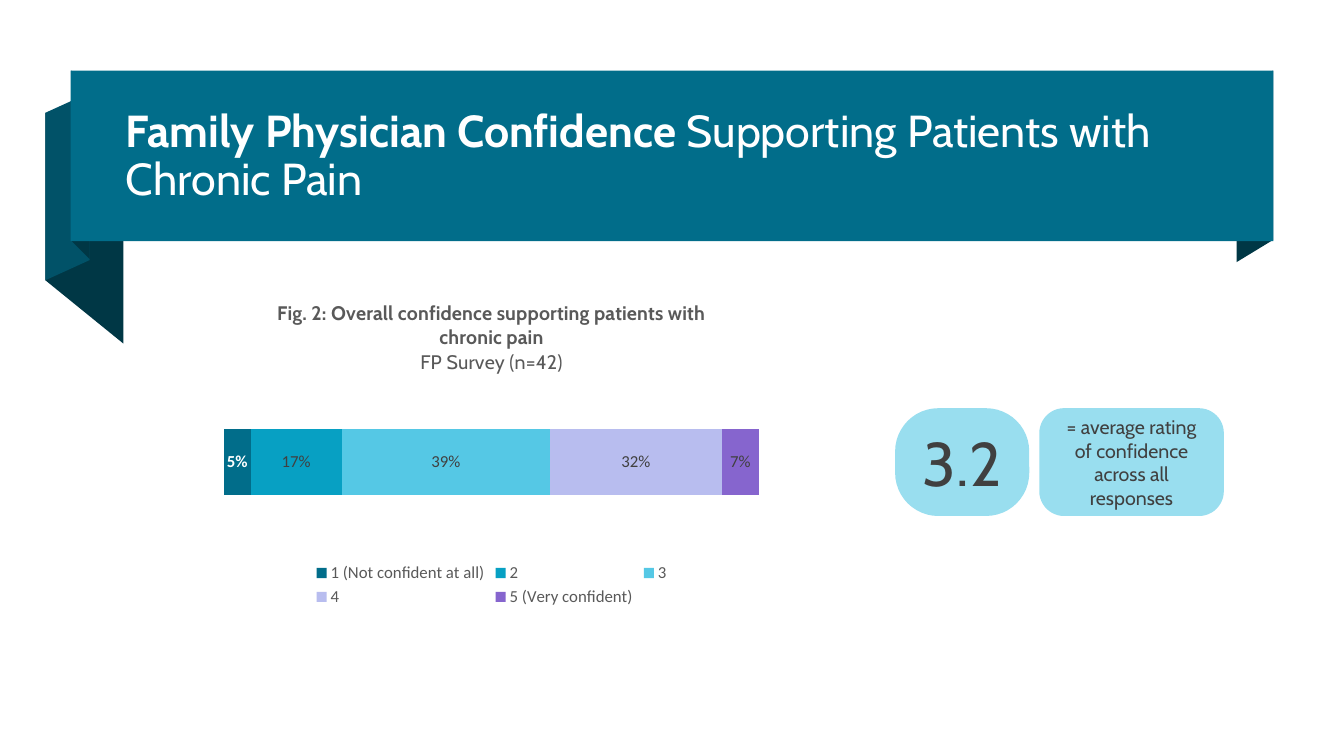
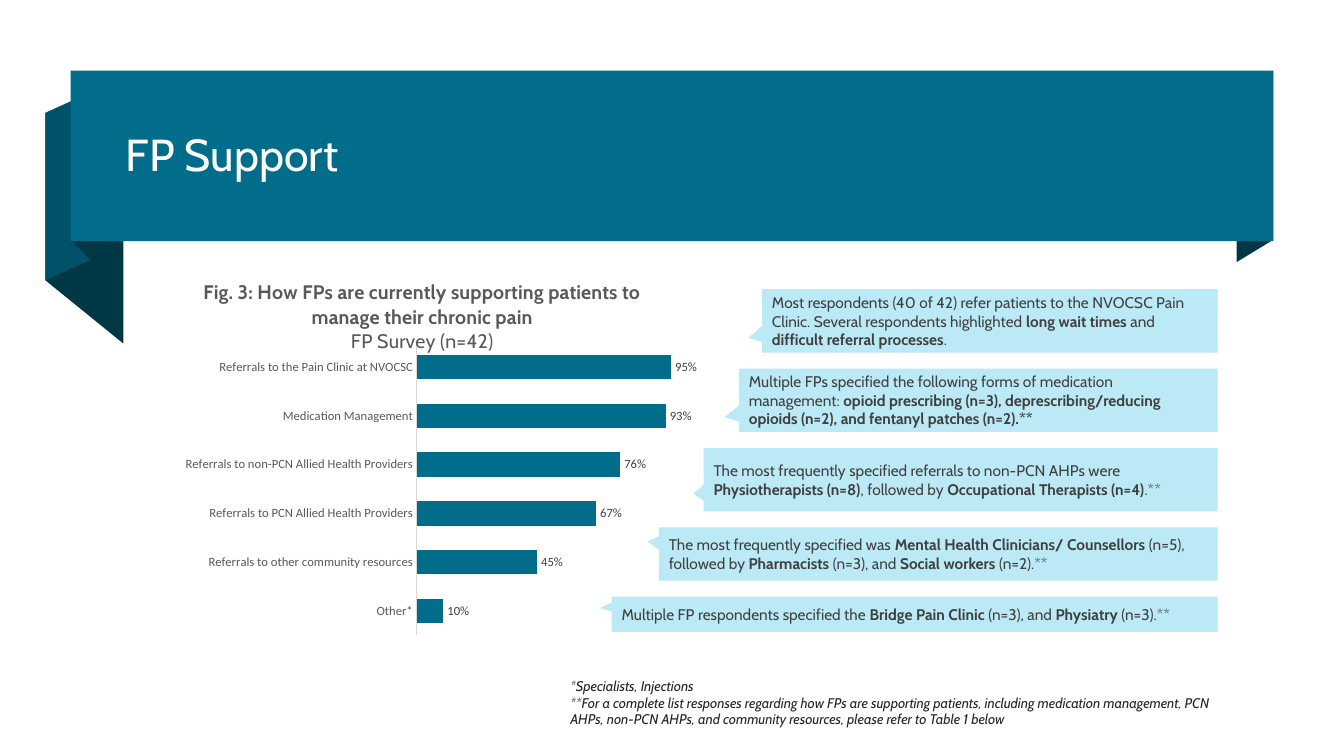
from dataclasses import dataclass
from typing import Any, Optional, Sequence

import pptx
import pptx.chart.data
import pptx.dml.color
import pptx.enum.chart
import pptx.enum.shapes
import pptx.enum.text
import pptx.oxml
import pptx.oxml.ns
import pptx.util

Pt = pptx.util.Pt
qn = pptx.oxml.ns.qn
Align = pptx.enum.text.PP_ALIGN
Anchor = pptx.enum.text.MSO_ANCHOR
Preset = pptx.enum.shapes.MSO_SHAPE
ChartType = pptx.enum.chart.XL_CHART_TYPE
LabelPosition = pptx.enum.chart.XL_LABEL_POSITION


@dataclass(frozen=True)
class Theme:
    text_font: str = "Cabin"
    chart_font: str = "Calibri"
    teal: str = "016D8A"
    fold: str = "015268"
    deep_fold: str = "003745"
    badge: str = "99DEEF"
    callout: str = "BBE9F5"
    white: str = "FFFFFF"
    ink: str = "404040"
    note: str = "262626"
    chart_text: str = "595959"
    axis: str = "D9D9D9"
    scale: tuple[str, ...] = ("016D8A", "07A0C3", "55C8E5", "B8BDEF", "8665CE")
    title_size: float = 32
    score_size: float = 44
    badge_size: float = 14
    callout_size: float = 11
    note_size: float = 10
    chart_title_size: float = 14
    legend_size: float = 12
    chart_size: float = 10
    bar_label_size: float = 9


THEME = Theme()


@dataclass(frozen=True)
class Span:
    text: str
    bold: bool = False
    italic: bool = False


@dataclass(frozen=True)
class Area:
    left: float
    top: float
    width: float
    height: float

    def lengths(self) -> tuple[Any, ...]:
        return Pt(self.left), Pt(self.top), Pt(self.width), Pt(self.height)


@dataclass(frozen=True)
class Badge:
    area: Area
    rounding: float
    text: str
    size: float


@dataclass(frozen=True)
class Callout:
    left: float
    height: float
    tip: tuple[float, float]
    spans: tuple[Span, ...]


@dataclass(frozen=True)
class Fold:
    color: str
    corners: tuple[tuple[float, float], ...]


@dataclass(frozen=True)
class BarSeries:
    name: str
    values: tuple[float, ...]
    color: str
    label_color: str = THEME.ink
    label_bold: bool = False


FOLDS = (
    Fold(THEME.deep_fold, ((909.4, 171.4), (883.4, 187.2), (883.4, 65.5), (909.4, 50.4))),
    Fold(THEME.deep_fold, ((88.2, 245.5), (32.4, 200.2), (32.4, 80.6), (88.2, 126))),
    Fold(THEME.fold, ((64, 185.8), (32.4, 200.2), (32.4, 80.6), (64, 66.2))),
    Fold(THEME.deep_fold, ((64, 185), (51, 172), (51, 50.4), (64, 64))),
)
BAND = Area(50.4, 50.4, 859.2, 121.8)
TITLE = Area(82.8, 59.8, 787.7, 104.4)

BADGES = (
    Badge(Area(639.4, 291.6, 95.8, 77), 0.4, "3.2", THEME.score_size),
    Badge(Area(742.4, 291.6, 131.8, 77), 0.23,
          "= average rating of confidence across all responses", THEME.badge_size),
)

CONFIDENCE = (
    BarSeries("1 (Not confident at all)", (0.05,), THEME.scale[0], THEME.white, True),
    BarSeries("2", (0.17,), THEME.scale[1]),
    BarSeries("3", (0.39,), THEME.scale[2]),
    BarSeries("4", (0.32,), THEME.scale[3]),
    BarSeries("5 (Very confident)", (0.07,), THEME.scale[4]),
)

SUPPORT_KINDS = (
    "Other*",
    "Referrals to other community resources",
    "Referrals to PCN Allied Health Providers",
    "Referrals to non-PCN Allied Health Providers",
    "Medication Management",
    "Referrals to the Pain Clinic at NVOCSC",
)
SUPPORT = (BarSeries("Series 1", (0.1, 0.45, 0.67, 0.76, 0.93, 0.95), THEME.teal),)

CALLOUT_TOP = 206.6
CALLOUT_RIGHT = 869.8
CALLOUT_GAP = 11.5
CALLOUTS = (
    Callout(544.3, 45.2, (-0.53, 0.27), (
        Span("Most respondents (40 of 42) refer patients to the NVOCSC Pain Clinic. "
             "Several respondents highlighted "),
        Span("long wait times ", True), Span("and "),
        Span("difficult referral processes", True), Span("."))),
    Callout(527.8, 45.2, (-0.53, 0.27), (
        Span("Multiple FPs specified the following forms of medication management: "),
        Span("opioid prescribing (n=3), deprescribing/reducing opioids (n=2), "
             "and fentanyl patches (n=2).**", True))),
    Callout(502.6, 45.2, (-0.52, 0.22), (
        Span("The most frequently specified referrals to non-PCN AHPs were "),
        Span("Physiotherapists (n=8)", True), Span(", followed by "),
        Span("Occupational Therapists (n=4)", True), Span(".**"))),
    Callout(470.6, 38, (-0.52, -0.23), (
        Span("The most frequently specified was "),
        Span("Mental Health Clinicians/ Counsellors ", True), Span("(n=5), followed by "),
        Span("Pharmacists ", True), Span("(n=3), and "),
        Span("Social workers ", True), Span("(n=2).**"))),
    Callout(437, 25.4, (-0.52, -0.18), (
        Span("Multiple FP respondents specified the "),
        Span("Bridge Pain Clinic ", True), Span("(n=3), and "),
        Span("Physiatry", True), Span(" (n=3).**"))),
)

FOOTNOTES = (
    (Span("*Specialists, Injections", italic=True),),
    (Span("**For a complete list responses regarding how FPs are supporting patients, "
          "including medication management, PCN AHPs, non-PCN AHPs, and community "
          "resources, please refer to Table 1 below", italic=True),),
)


def rgb(color: str) -> pptx.dml.color.RGBColor:
    return pptx.dml.color.RGBColor.from_string(color)


def style_font(font: Any, name: str, size: float, color: str, bold: bool = False,
               italic: bool = False) -> None:
    font.name, font.size, font.bold, font.italic = name, Pt(size), bold, italic
    font.color.rgb = rgb(color)


def write(frame: Any, paragraphs: Sequence[Sequence[Span]], size: float, color: str,
          align: Any = Align.LEFT, line_spacing: Optional[float] = None) -> None:
    for index, spans in enumerate(paragraphs):
        para = frame.paragraphs[0] if index == 0 else frame.add_paragraph()
        para.alignment = align
        if line_spacing:
            para.line_spacing = line_spacing
        for span in spans:
            run = para.add_run()
            run.text = span.text
            style_font(run.font, THEME.text_font, size, color, span.bold, span.italic)


def paint(shape: Any, color: str) -> None:
    shape.shadow.inherit = False
    shape.fill.solid()
    shape.fill.fore_color.rgb = rgb(color)
    shape.line.fill.background()


def add_panel(shapes: Any, preset: Any, area: Area, color: str,
              adjustments: Sequence[float] = ()) -> Any:
    panel = shapes.add_shape(preset, *area.lengths())
    paint(panel, color)
    for index, value in enumerate(adjustments):
        panel.adjustments[index] = value
    panel.text_frame.word_wrap = True
    panel.text_frame.vertical_anchor = Anchor.MIDDLE
    return panel


def add_text_box(page: Any, area: Area, anchor: Any) -> Any:
    frame = page.shapes.add_textbox(*area.lengths()).text_frame
    frame.word_wrap = True
    frame.vertical_anchor = anchor
    return frame


def add_titled_page(deck: Any, title: Sequence[Span]) -> Any:
    """Add a blank page with the folded ribbon and its title."""
    page = deck.slides.add_slide(deck.slide_layouts[6])
    ribbon = page.shapes.add_group_shape()
    for fold in FOLDS:
        points = [(Pt(x), Pt(y)) for x, y in fold.corners]
        builder = ribbon.shapes.build_freeform(*points[0])
        builder.add_line_segments(points[1:], close=True)
        paint(builder.convert_to_shape(), fold.color)
    add_panel(ribbon.shapes, Preset.RECTANGLE, BAND, THEME.teal)
    write(add_text_box(page, TITLE, Anchor.MIDDLE), [title], THEME.title_size,
          THEME.white, line_spacing=0.9)
    return page


def place(parent: Any, index: int, **fractions: float) -> None:
    """Fix a chart part at fractions of the chart's width and height."""
    for layout in parent.findall(qn("c:layout")):
        parent.remove(layout)
    target = '<c:layoutTarget val="inner"/>' if "w" in fractions else ""
    modes = '<c:xMode val="edge"/><c:yMode val="edge"/>'
    values = "".join(f'<c:{key} val="{value}"/>' for key, value in fractions.items())
    parent.insert(index, pptx.oxml.parse_xml(
        f'<c:layout {pptx.oxml.ns.nsdecls("c")}><c:manualLayout>'
        f"{target}{modes}{values}</c:manualLayout></c:layout>"))


def add_bar_chart(page: Any, kind: Any, area: Area, title: Sequence[Sequence[Span]],
                  categories: Sequence[str], series: Sequence[BarSeries], gap: int,
                  label_size: float, label_position: Any,
                  plot_area: tuple[float, float, float, float]) -> Any:
    data = pptx.chart.data.CategoryChartData(number_format="0%")
    data.categories = categories
    for item in series:
        data.add_series(item.name, item.values)
    chart = page.shapes.add_chart(kind, *area.lengths(), data).chart
    style_font(chart.font, THEME.chart_font, THEME.chart_size, THEME.chart_text)
    chart.has_legend = False
    chart.has_title = True
    write(chart.chart_title.text_frame, title, THEME.chart_title_size,
          THEME.chart_text, Align.CENTER)
    plot = chart.plots[0]
    plot.gap_width = gap
    plot.vary_by_categories = False
    for item, bars in zip(series, plot.series):
        bars.format.fill.solid()
        bars.format.fill.fore_color.rgb = rgb(item.color)
        labels = bars.data_labels
        labels.show_value = True
        labels.number_format = "0%"
        labels.number_format_is_linked = False
        labels.position = label_position
        style_font(labels.font, THEME.chart_font, label_size, item.label_color,
                   item.label_bold)
    values = chart.value_axis
    values.minimum_scale, values.maximum_scale = 0, 1
    values.has_major_gridlines = False
    values.visible = False
    left, top, width, height = plot_area
    place(chart.element.find(".//" + qn("c:plotArea")), 0,
          x=left, y=top, w=width, h=height)
    return chart


def build_confidence_page(deck: Any) -> None:
    page = add_titled_page(deck, (Span("Family Physician Confidence ", True),
                                  Span("Supporting Patients with Chronic Pain")))
    for badge in BADGES:
        panel = add_panel(page.shapes, Preset.ROUNDED_RECTANGLE, badge.area,
                          THEME.badge, (badge.rounding,))
        write(panel.text_frame, [[Span(badge.text)]], badge.size, THEME.ink, Align.CENTER)
    title = ((Span("Fig. 2: Overall confidence supporting patients with chronic pain", True),),
             (Span("FP Survey (n=42)"),))
    chart = add_bar_chart(page, ChartType.BAR_STACKED_100, Area(152, 200.2, 398.2, 236.2),
                          title, ("1",), CONFIDENCE, 150, THEME.legend_size,
                          LabelPosition.CENTER, (0.02, 0.3, 0.96, 0.5))
    chart.plots[0].overlap = 100
    chart.category_axis.visible = False
    chart.has_legend = True
    chart.legend.position = pptx.enum.chart.XL_LEGEND_POSITION.BOTTOM
    chart.legend.include_in_layout = False
    style_font(chart.legend.font, THEME.chart_font, THEME.legend_size, THEME.chart_text)
    place(chart.chart_title.element, 1, x=0.11, y=0.05)


def build_support_page(deck: Any) -> None:
    page = add_titled_page(deck, (Span("FP Support"),))
    top = CALLOUT_TOP
    for callout in CALLOUTS:
        area = Area(callout.left, top, CALLOUT_RIGHT - callout.left, callout.height)
        panel = add_panel(page.shapes, Preset.RECTANGULAR_CALLOUT, area,
                          THEME.callout, callout.tip)
        write(panel.text_frame, [callout.spans], THEME.callout_size, THEME.ink)
        top += callout.height + CALLOUT_GAP
    write(add_text_box(page, Area(400.3, 480.2, 488.2, 44), Anchor.TOP), FOOTNOTES,
          THEME.note_size, THEME.note)
    title = ((Span("Fig. 3: How FPs are currently supporting patients to manage "
                   "their chronic pain", True),), (Span("FP Survey (n=42)"),))
    chart = add_bar_chart(page, ChartType.BAR_CLUSTERED, Area(102.2, 187.2, 398.9, 303.1),
                          title, SUPPORT_KINDS, SUPPORT, 100, THEME.bar_label_size,
                          LabelPosition.OUTSIDE_END, (0.49, 0.19, 0.48, 0.69))
    axis = chart.category_axis
    axis.major_tick_mark = pptx.enum.chart.XL_TICK_MARK.NONE
    axis.format.line.color.rgb = rgb(THEME.axis)
    axis.format.line.width = Pt(0.75)
    style_font(axis.tick_labels.font, THEME.chart_font, THEME.bar_label_size,
               THEME.chart_text)


def main() -> None:
    deck = pptx.Presentation()
    deck.slide_width, deck.slide_height = Pt(960), Pt(540)
    build_confidence_page(deck)
    build_support_page(deck)
    deck.save("out.pptx")


if __name__ == "__main__":
    main()
